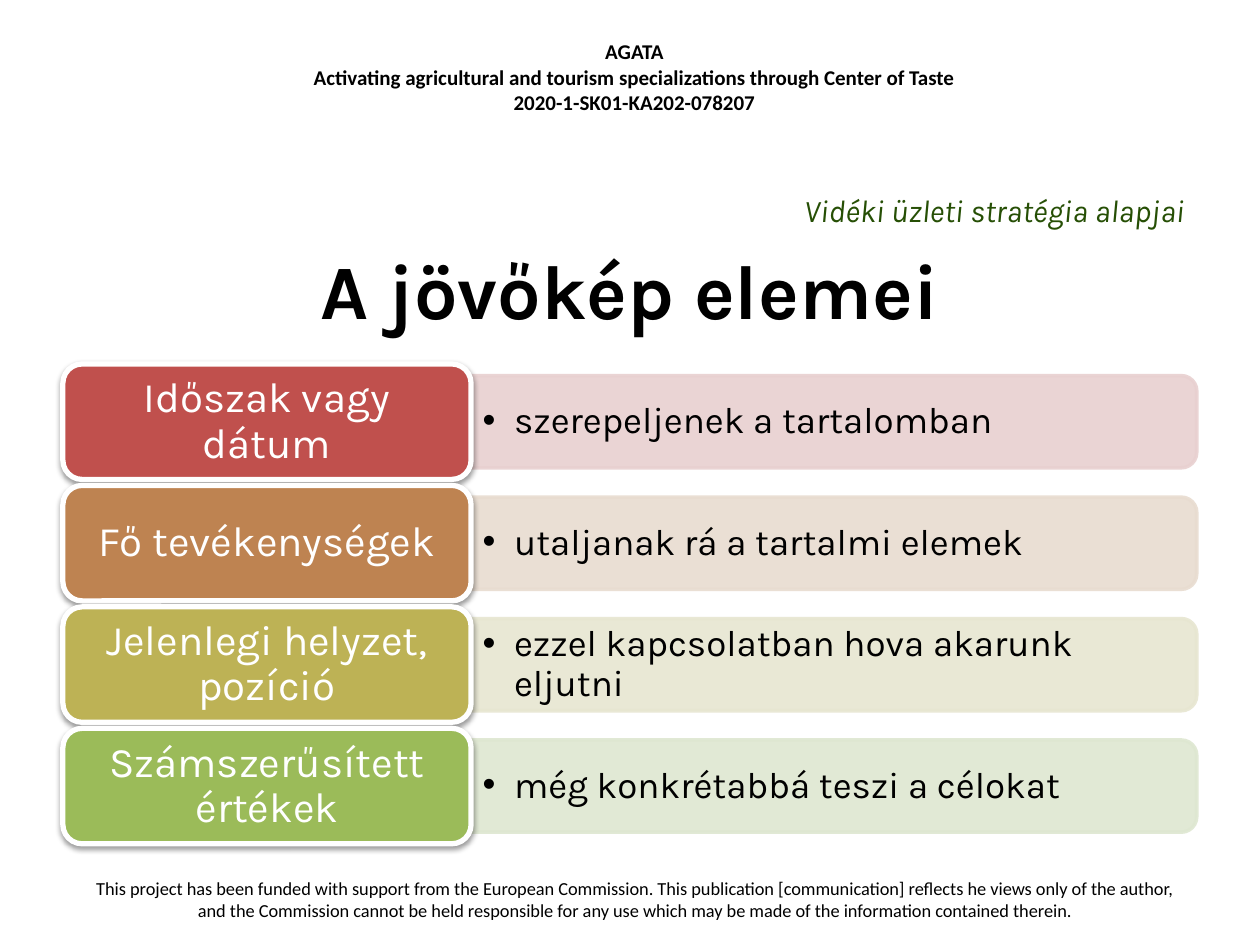
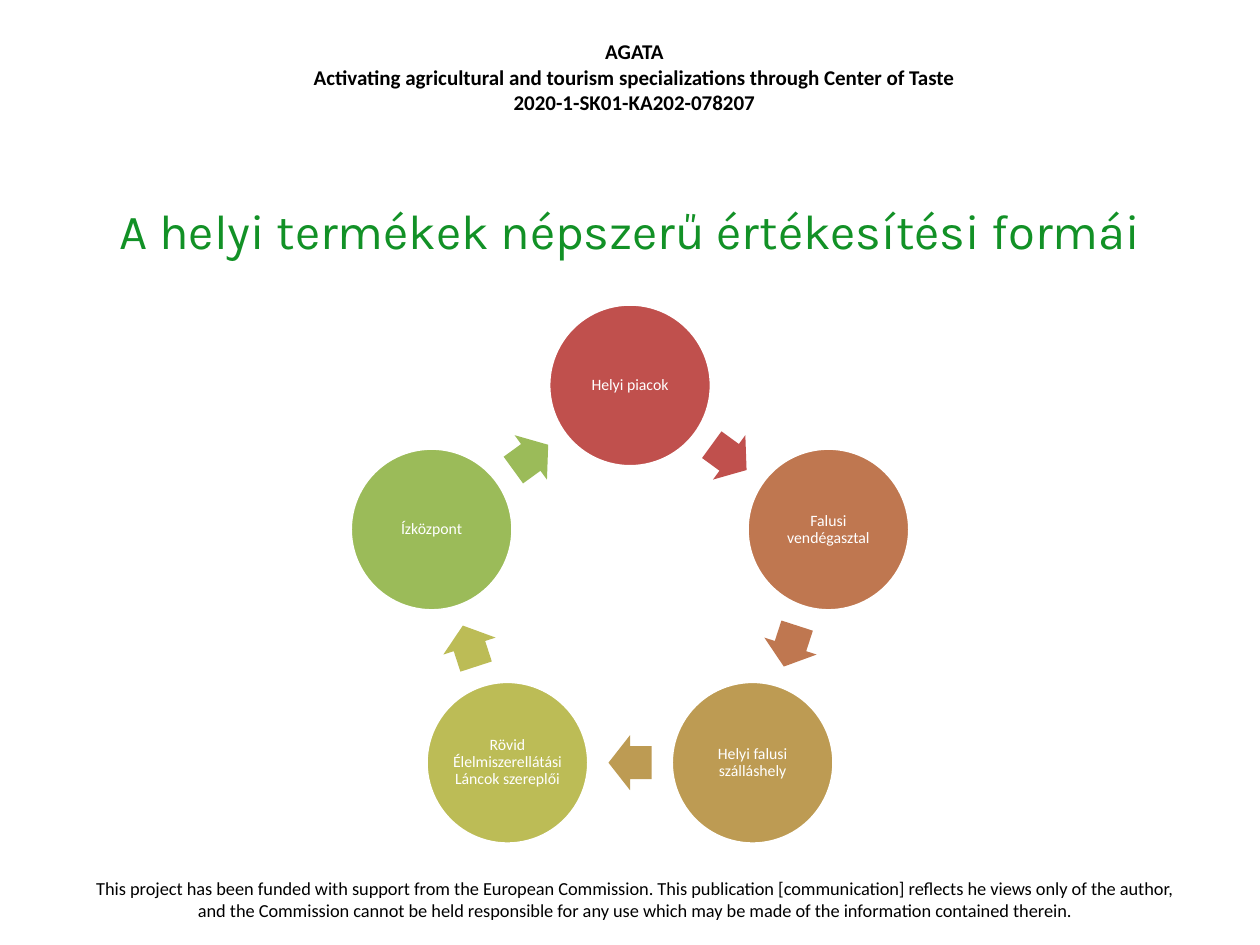
from math import cos, pi, sin

from lxml import etree
from pptx import Presentation
from pptx.dml.color import RGBColor
from pptx.enum.shapes import MSO_SHAPE
from pptx.enum.text import MSO_ANCHOR, PP_ALIGN
from pptx.oxml.ns import qn
from pptx.util import Pt

LEFT, CENTER, RIGHT = PP_ALIGN.LEFT, PP_ALIGN.CENTER, PP_ALIGN.RIGHT
TOP, MIDDLE = MSO_ANCHOR.TOP, MSO_ANCHOR.MIDDLE
ROUNDED, HALF_ROUNDED = MSO_SHAPE.ROUNDED_RECTANGLE, MSO_SHAPE.ROUND_2_SAME_RECTANGLE
OVAL, RIGHT_ARROW = MSO_SHAPE.OVAL, MSO_SHAPE.RIGHT_ARROW

COLORS = {
    "black": "000000", "white": "FFFFFF", "title_green": "129126", "topic_green": "264F05",
    "red": "C0504D", "pale_red": "E8D0D0",
    "brown": "BE8351", "pale_brown": "E8DCD0",
    "mustard": "BDB255", "pale_mustard": "E7E6D1",
    "green": "9BBB59", "pale_green": "DEE7D1",
    "copper": "BF7750", "ochre": "BD9B53", "olive": "BCBC56",
}
HEADING_FONT, SMALL_FONT = "Karla", "Calibri"

PROJECT_LINES = [
    "AGATA",
    "Activating agricultural and tourism specializations through Center of Taste",
    "2020-1-SK01-KA202-078207",
]
DISCLAIMER = (
    "This project has been funded with support from the European Commission. "
    "This publication [communication] reflects he views only of the author, "
    "and the Commission cannot be held responsible for any use which may be made "
    "of the information contained therein."
)
VISION_ELEMENTS = [
    ("Időszak vagy dátum", "szerepeljenek a tartalomban", "red"),
    ("Fő tevékenységek", "utaljanak rá a tartalmi elemek", "brown"),
    ("Jelenlegi helyzet, pozíció", "ezzel kapcsolatban hova akarunk eljutni", "mustard"),
    ("Számszerűsített értékek", "még konkrétabbá teszi a célokat", "green"),
]
SALES_FORMS = [
    ("Helyi piacok", "red"),
    ("Falusi vendégasztal", "copper"),
    ("Helyi falusi szálláshely", "ochre"),
    ("Rövid Élelmiszerellátási Láncok szereplői", "olive"),
    ("Ízközpont", "green"),
]


def write(frame, lines, size, font, color, align=CENTER, anchor=MIDDLE,
          bold=False, italic=False, spacing=None):
    frame.word_wrap = True
    frame.vertical_anchor = anchor
    frame.text = "\n".join(lines)
    for paragraph in frame.paragraphs:
        paragraph.alignment = align
        if spacing:
            paragraph.line_spacing = spacing
        for run in paragraph.runs:
            run.font.size = Pt(size)
            run.font.name = font
            run.font.bold = bold
            run.font.italic = italic
            run.font.color.rgb = RGBColor.from_string(COLORS[color])


def add_filled(slide, preset, center_x, center_y, width, height, color, outline=None, weight=0):
    shape = slide.shapes.add_shape(
        preset, Pt(center_x - width / 2), Pt(center_y - height / 2), Pt(width), Pt(height))
    shape.shadow.inherit = False
    shape.fill.solid()
    shape.fill.fore_color.rgb = RGBColor.from_string(COLORS[color])
    if outline:
        shape.line.color.rgb = RGBColor.from_string(COLORS[outline])
        shape.line.width = Pt(weight)
    else:
        shape.line.fill.background()
    return shape


prs = Presentation()
prs.slide_width, prs.slide_height = Pt(720), Pt(540)
title_only = prs.slide_layouts[5]

slides = []
for heading, top, height, size, color, bold in [
    ("A jövőkép elemei", 120, 90, 44, "black", True),
    ("A helyi termékek népszerű értékesítési formái", 106, 51, 28, "title_green", False),
]:
    slide = prs.slides.add_slide(title_only)
    project = slide.shapes.add_textbox(Pt(150), Pt(18.7), Pt(425), Pt(51))
    write(project.text_frame, PROJECT_LINES, 12, SMALL_FONT, "black", anchor=TOP, bold=True)
    disclaimer = slide.shapes.add_textbox(Pt(39), Pt(497.5), Pt(648), Pt(34))
    disclaimer.text_frame.margin_left = disclaimer.text_frame.margin_right = Pt(12)
    write(disclaimer.text_frame, [DISCLAIMER], 10.5, SMALL_FONT, "black", anchor=TOP)
    title = slide.shapes.title
    title.left, title.top, title.width, title.height = Pt(36), Pt(top), Pt(648), Pt(height)
    write(title.text_frame, [heading], size, HEADING_FONT, color, bold=bold)
    slides.append(slide)
vision, sales = slides

topic = vision.shapes.add_textbox(Pt(36), Pt(106), Pt(648), Pt(28))
write(topic.text_frame, ["Vidéki üzleti stratégia alapjai"], 18, HEADING_FONT,
      "topic_green", align=RIGHT, italic=True)

FIRST_ROW, ROW_PITCH = 241, 69.4
for row, (element, advice, color) in enumerate(VISION_ELEMENTS):
    middle = FIRST_ROW + row * ROW_PITCH
    pale = "pale_" + color
    band = add_filled(vision, HALF_ROUNDED, 476.5, middle, 52.7, 414.7, pale, pale, 2)
    band.rotation = 90
    for tint in band.element.spPr.iter(qn("a:srgbClr")):
        etree.SubElement(tint, qn("a:alpha"), val="90000")

    advice_box = vision.shapes.add_textbox(Pt(269.3), Pt(middle - 23.8), Pt(412), Pt(47.6))
    advice_frame = advice_box.text_frame
    advice_frame.margin_left = advice_frame.margin_right = Pt(6.5)
    advice_frame.margin_top = advice_frame.margin_bottom = Pt(3)
    write(advice_frame, [advice], 21, HEADING_FONT, "black", align=LEFT, spacing=0.9)
    bullet_props = advice_frame.paragraphs[0]._p.get_or_add_pPr()
    bullet_props.set("marL", str(Pt(18)))
    bullet_props.set("indent", str(-Pt(18)))
    etree.SubElement(bullet_props, qn("a:buFont"), typeface="Arial")
    etree.SubElement(bullet_props, qn("a:buChar"), char="•")

    label = add_filled(vision, ROUNDED, 152.6, middle, 233.3, 66, color, "white", 3)
    write(label.text_frame, [element], 24, HEADING_FONT, "white", spacing=0.9)
    effects = label.element.spPr.find(qn("a:effectLst"))
    shadow = etree.SubElement(effects, qn("a:outerShdw"), blurRad=str(Pt(3.1)),
                              dist=str(Pt(1.6)), dir="5400000", rotWithShape="0")
    shade = etree.SubElement(shadow, qn("a:srgbClr"), val=COLORS["black"])
    etree.SubElement(shade, qn("a:alpha"), val="38000")

RING_X, RING_Y, RING_RADIUS = 360, 339.4, 119.2
ARROW_RADIUS = RING_RADIUS * cos(pi / len(SALES_FORMS))
STEP = 360 / len(SALES_FORMS)
for position, (form, color) in enumerate(SALES_FORMS):
    angle = position * STEP * pi / 180
    circle = add_filled(sales, OVAL, RING_X + RING_RADIUS * sin(angle),
                        RING_Y - RING_RADIUS * cos(angle), 93, 93, color, "white", 2)
    circle_frame = circle.text_frame
    circle_frame.margin_left = circle_frame.margin_right = Pt(0.9)
    circle_frame.margin_top = circle_frame.margin_bottom = Pt(0.9)
    write(circle_frame, [form], 9, SMALL_FONT, "white", spacing=0.9)

    turn = (position + 0.5) * STEP
    angle = turn * pi / 180
    arrow = add_filled(sales, RIGHT_ARROW, RING_X + ARROW_RADIUS * sin(angle),
                       RING_Y - ARROW_RADIUS * cos(angle), 24.6, 31.4, color)
    arrow.adjustments[0], arrow.adjustments[1] = 0.6, 0.5
    arrow.rotation = turn

prs.save("out.pptx")
